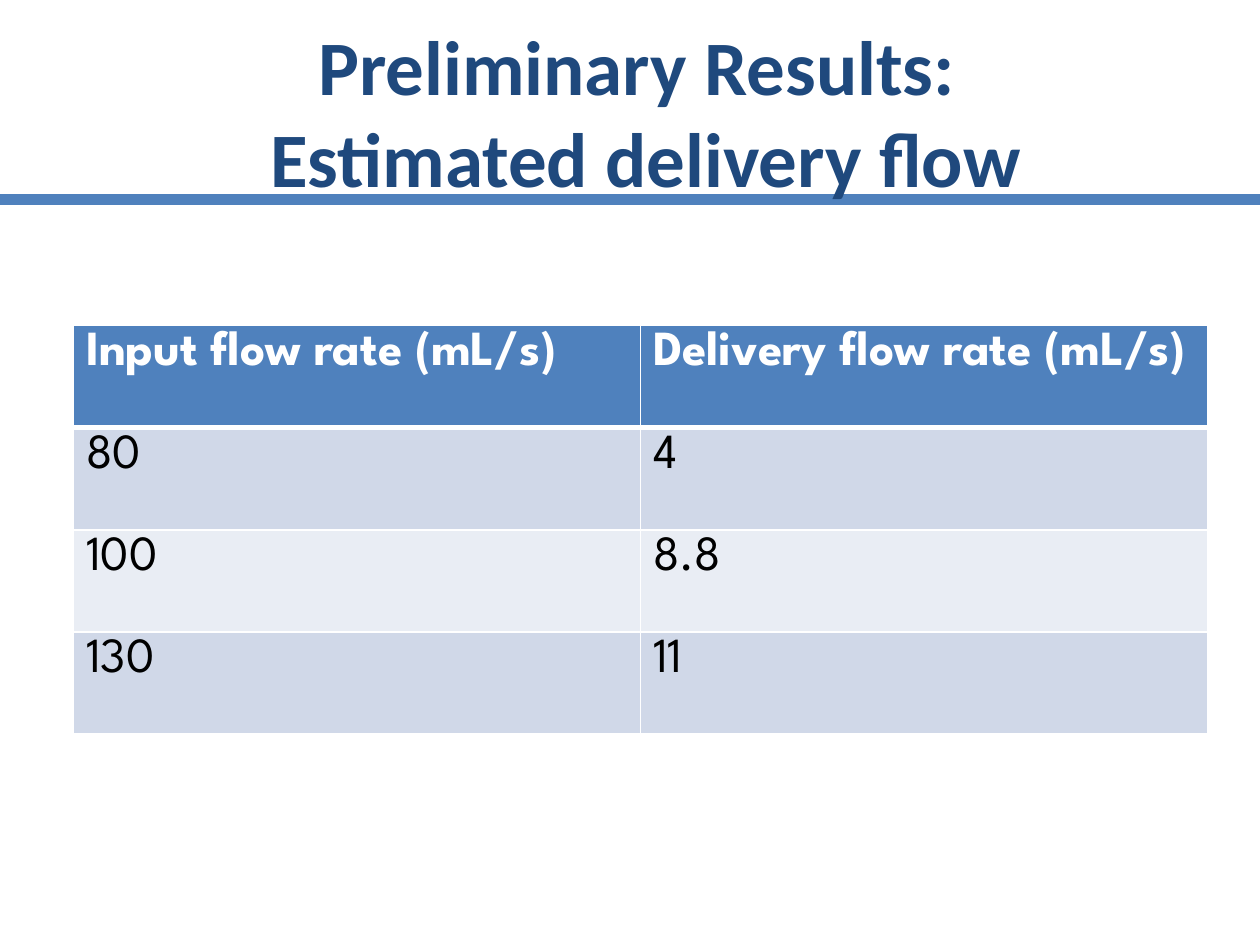
"""Build the slide with the estimated delivery flow table."""
from lxml import etree
from pptx import Presentation
from pptx.dml.color import RGBColor
from pptx.enum.shapes import MSO_CONNECTOR
from pptx.enum.text import MSO_ANCHOR, PP_ALIGN
from pptx.oxml.ns import qn
from pptx.util import Cm, Pt


def color(value):
    return RGBColor.from_string(value)


def add_border(cell, side, points):
    properties = cell._tc.get_or_add_tcPr()
    line = etree.SubElement(properties, qn(f"a:ln{side}"), w=str(Pt(points)))
    fill = etree.SubElement(line, qn("a:solidFill"))
    etree.SubElement(fill, qn("a:srgbClr"), val="FFFFFF")


deck = Presentation()
deck.slide_width, deck.slide_height = Cm(25.4), Cm(19.05)
page = deck.slides.add_slide(deck.slide_layouts[6])

rule = page.shapes.add_connector(MSO_CONNECTOR.STRAIGHT, Cm(0), Cm(4.02), Cm(25.4), Cm(4.02))
rule.line.color.rgb = color("4F81BD")
rule.line.width = Pt(6)
etree.SubElement(rule._element.spPr, qn("a:effectLst"))

title = page.shapes.add_textbox(Cm(1.27), Cm(0.64), Cm(23.5), Cm(3.18))
title.text_frame.word_wrap = True
title.text_frame.vertical_anchor = MSO_ANCHOR.MIDDLE
para = title.text_frame.paragraphs[0]
para.text = "Preliminary Results: \vEstimated delivery flow"
para.alignment = PP_ALIGN.CENTER
for span in para.runs:
    span.font.name = "Calibri"
    span.font.size = Pt(44)
    span.font.bold = True
    span.font.color.rgb = color("1F497D")

flow_rates = [
    ("Input flow rate (mL/s)", "Delivery flow rate (mL/s)"),
    ("80", "4"),
    ("100", "8.8"),
    ("130", "11"),
]
row_fills = ["4F81BD", "D0D8E8", "E9EDF4", "D0D8E8"]
table = page.shapes.add_table(4, 2, Cm(1.48), Cm(6.56), Cm(22.86), Cm(8.24)).table
for row, (rates, row_fill) in enumerate(zip(flow_rates, row_fills)):
    header = row == 0
    for column, rate in enumerate(rates):
        cell = table.cell(row, column)
        for side in "LRTB":
            thick = (header and side == "B") or (row == 1 and side == "T")
            add_border(cell, side, 3 if thick else 1)
        cell.fill.solid()
        cell.fill.fore_color.rgb = color(row_fill)
        cell.text_frame.text = rate
        span = cell.text_frame.paragraphs[0].runs[0]
        span.font.name = "League Spartan"
        span.font.size = Pt(28)
        span.font.bold = header
        span.font.color.rgb = color("FFFFFF" if header else "000000")

deck.save("out.pptx")
